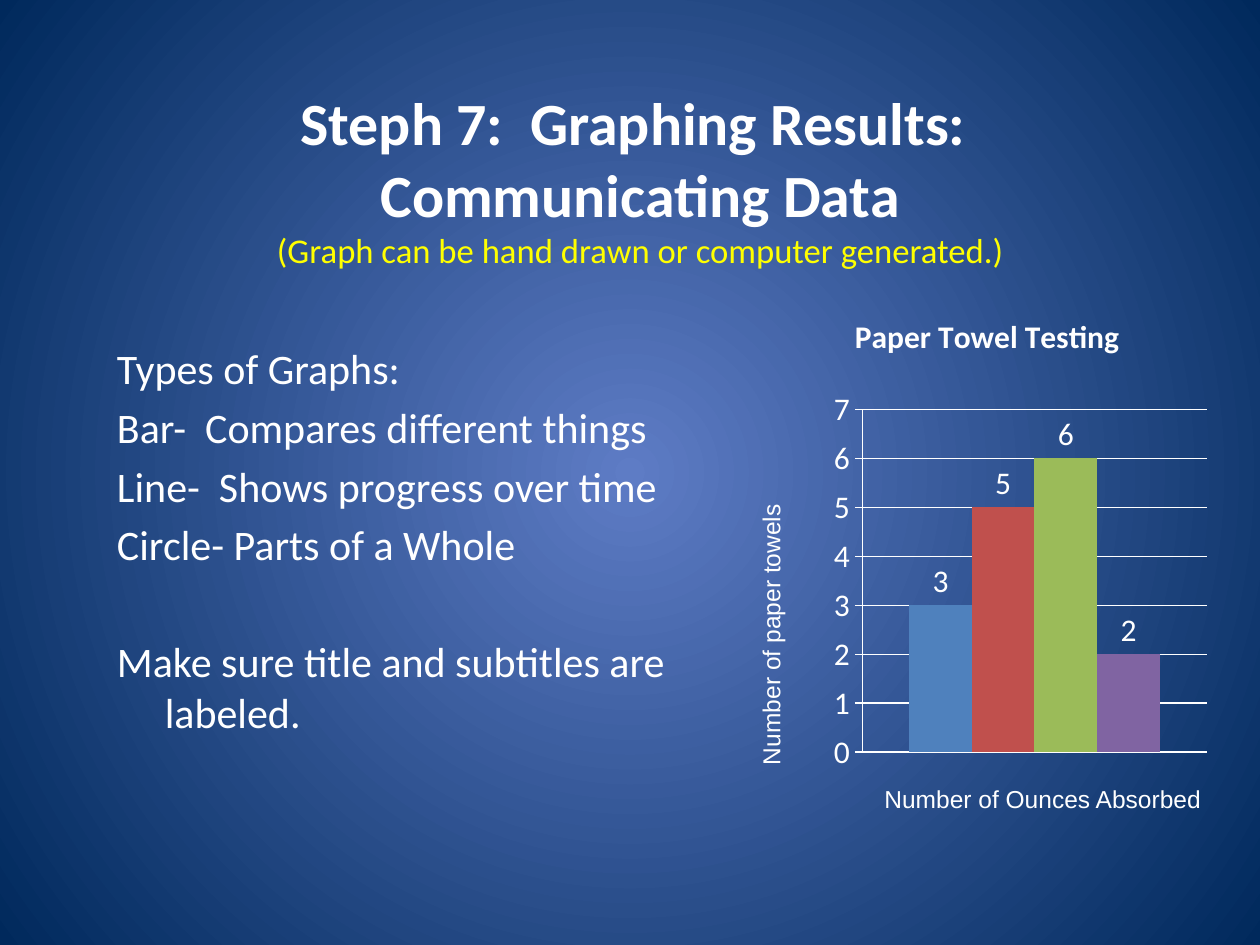
from lxml import etree
from pptx import Presentation
from pptx.chart.data import CategoryChartData
from pptx.dml.color import RGBColor
from pptx.enum.chart import XL_CHART_TYPE, XL_LABEL_POSITION, XL_TICK_MARK
from pptx.enum.text import MSO_ANCHOR, MSO_AUTO_SIZE, PP_ALIGN
from pptx.oxml import parse_xml
from pptx.oxml.ns import nsdecls, qn
from pptx.util import Inches, Pt

COLUMNS = XL_CHART_TYPE.COLUMN_CLUSTERED
OUTSIDE_END = XL_LABEL_POSITION.OUTSIDE_END
TICK_OUTSIDE, TICK_NONE = XL_TICK_MARK.OUTSIDE, XL_TICK_MARK.NONE
MIDDLE, CENTER = MSO_ANCHOR.MIDDLE, PP_ALIGN.CENTER
FIT_NONE, FIT_SHAPE = MSO_AUTO_SIZE.NONE, MSO_AUTO_SIZE.SHAPE_TO_FIT_TEXT

WHITE, YELLOW = "FFFFFF", "FFFF00"
GRAPH_TYPES = [
    "Types of Graphs:",
    "Bar-  Compares different things",
    "Line-  Shows progress over time",
    "Circle- Parts of a Whole",
]
LABEL_HINT = "Make sure title and subtitles are labeled."
BARS = [(3, "4F81BD"), (5, "C0504D"), (6, "9BBB59"), (2, "8064A2")]


def color(value):
    return RGBColor.from_string(value)


def format_font(font, size, name="Calibri", fill=WHITE, bold=False):
    font.size, font.name, font.bold = Pt(size), name, bold
    font.color.rgb = color(fill)


def add_text(para, text, **style):
    """Add text to a paragraph; a newline becomes a line break."""
    for index, line in enumerate(text.split("\n")):
        if index:
            para.add_line_break()
        if line:
            span = para.add_run()
            span.text = line
            format_font(span.font, **style)


def set_background(page):
    fill = page.background.fill
    fill.gradient()
    for stop, position, value in zip(fill.gradient_stops, (0, 1), ("5E7CC5", "00295C")):
        stop.position = position
        stop.color.rgb = color(value)
    # Radial gradient from the middle of the slide
    gradient = page.background._cSld.find(".//" + qn("a:gradFill"))
    gradient.remove(gradient.find(qn("a:lin")))
    gradient.append(parse_xml(
        f'<a:path {nsdecls("a")} path="circle">'
        '<a:fillToRect l="50000" t="50000" r="50000" b="50000"/></a:path>'))


def set_title(page):
    title = page.shapes.title
    title.left, title.top = Inches(0.83), Inches(0.58)
    title.width, title.height = Inches(8.5), Inches(1.67)
    frame = title.text_frame
    frame.vertical_anchor, frame.auto_size = MIDDLE, FIT_NONE
    para = frame.paragraphs[0]
    para.alignment = CENTER
    add_text(para, "Steph 7:  Graphing Results: \nCommunicating Data\n", size=34.2, bold=True)
    add_text(para, "(Graph can be hand drawn or computer generated.)", size=19.8, fill=YELLOW)


def add_graph_notes(page):
    box = page.shapes.add_textbox(Inches(0.83), Inches(2.67), Inches(4.92), Inches(4.25))
    frame = box.text_frame
    frame.word_wrap = True
    gaps = [0] + [4.8] * (len(GRAPH_TYPES) - 1) + [38]
    for index, (text, gap) in enumerate(zip(GRAPH_TYPES + [LABEL_HINT], gaps)):
        para = frame.add_paragraph() if index else frame.paragraphs[0]
        properties = para._p.get_or_add_pPr()
        properties.set("marL", str(Inches(0.38)))
        properties.set("indent", str(-Inches(0.38)))
        para.space_before = Pt(gap)
        add_text(para, text, size=24)


def add_axis_label(page, text, left, top, width, rotation=0):
    box = page.shapes.add_textbox(Inches(left), Inches(top), Inches(width), Inches(0.34))
    box.rotation = rotation
    frame = box.text_frame
    frame.word_wrap, frame.auto_size = True, FIT_SHAPE
    add_text(frame.paragraphs[0], text, size=14, name="Arial")


def place_chart_part(parent, before, **place):
    """Give the plot area or the title a fixed place, in shares of the chart."""
    old = parent.find(qn("c:layout"))
    if old is not None:
        parent.remove(old)
    layout = etree.Element(qn("c:layout"))
    manual = etree.SubElement(layout, qn("c:manualLayout"))
    for name, value in place.items():
        etree.SubElement(manual, qn("c:" + name)).set("val", str(value))
    parent.insert(before, layout)


def add_towel_chart(page):
    data = CategoryChartData()
    data.categories = ["1"]
    for number, (value, _) in enumerate(BARS, 1):
        data.add_series(f"Series {number}", [value])
    chart = page.shapes.add_chart(
        COLUMNS, Inches(6.33), Inches(2.25), Inches(3.42), Inches(4), data).chart
    chart.has_legend = False
    format_font(chart.font, 18)

    # Title
    chart.has_title = True
    add_text(chart.chart_title.text_frame.paragraphs[0], "Paper Towel Testing ",
             size=18, bold=True)
    place_chart_part(chart.chart_title._element, 1,
                     xMode="edge", yMode="edge", x=0.12, y=0.05)
    chart.chart_title.include_in_layout = False

    # Axes and grid
    chart.category_axis.visible = False
    axis = chart.value_axis
    axis.minimum_scale, axis.maximum_scale, axis.major_unit = 0, 7, 1
    axis.major_tick_mark, axis.minor_tick_mark = TICK_OUTSIDE, TICK_NONE
    axis.has_major_gridlines = True
    for line in (axis.format.line, axis.major_gridlines.format.line):
        line.color.rgb = color(WHITE)
        line.width = Pt(0.75)

    # Bars with their values
    plot = chart.plots[0]
    plot.gap_width, plot.overlap, plot.vary_by_categories = 150, 0, False
    for series, (_, value) in zip(plot.series, BARS):
        series.format.fill.solid()
        series.format.fill.fore_color.rgb = color(value)
        labels = series.data_labels
        labels.show_value, labels.position = True, OUTSIDE_END
        format_font(labels.font, 18)
    place_chart_part(chart._chartSpace.chart.plotArea, 0, layoutTarget="inner",
                     xMode="edge", yMode="edge", x=0.15, y=0.25, w=0.8, h=0.68)


def main():
    deck = Presentation()
    deck.slide_width, deck.slide_height = Inches(10), Inches(7.5)
    page = deck.slides.add_slide(deck.slide_layouts.get_by_name("Title Only"))
    set_background(page)
    set_title(page)
    add_graph_notes(page)
    add_towel_chart(page)
    add_axis_label(page, "Number of paper towels", 4.62, 4.5, 3, rotation=270)
    add_axis_label(page, "Number of Ounces Absorbed", 6.92, 6.17, 2.75)
    deck.save("out.pptx")


if __name__ == "__main__":
    main()
